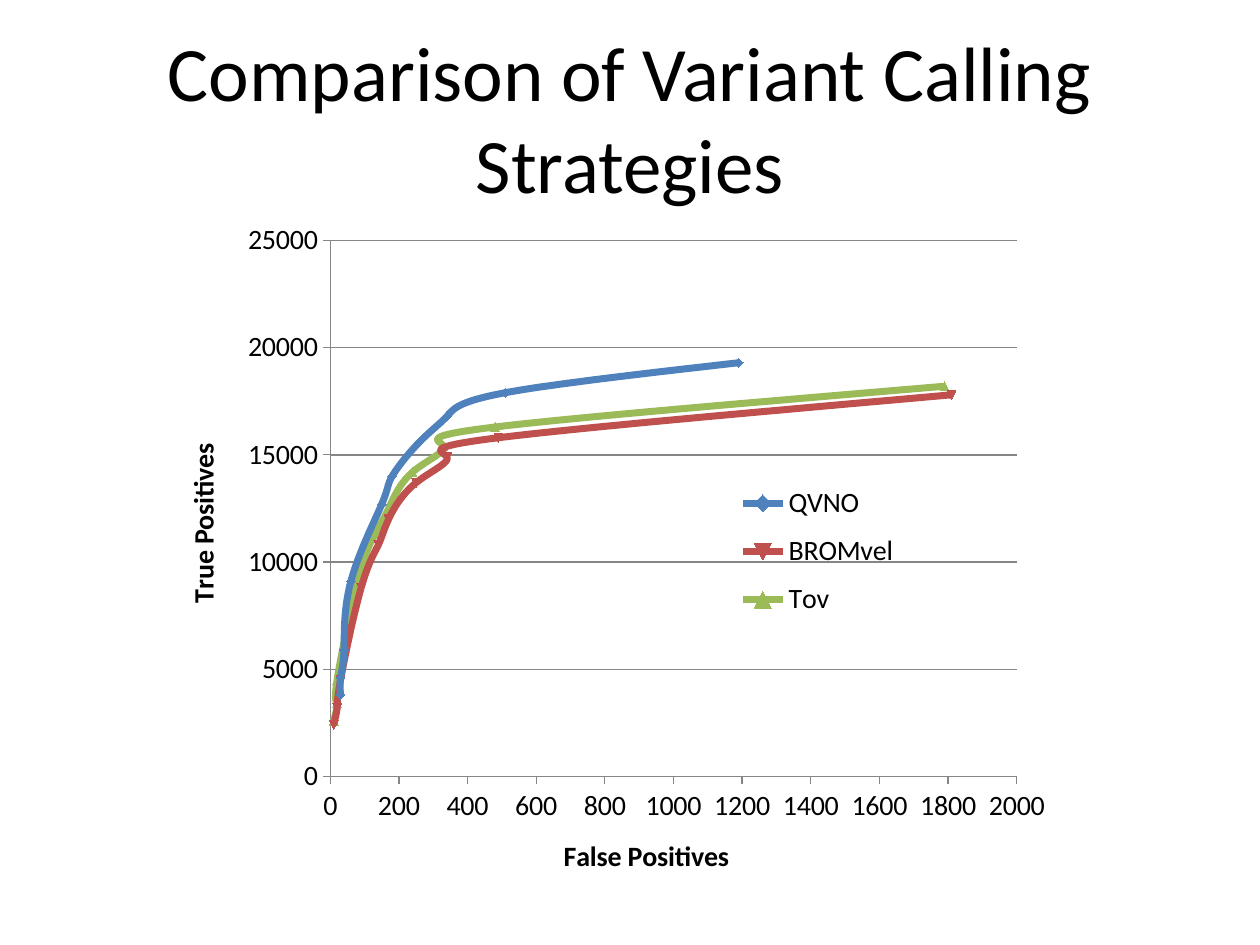
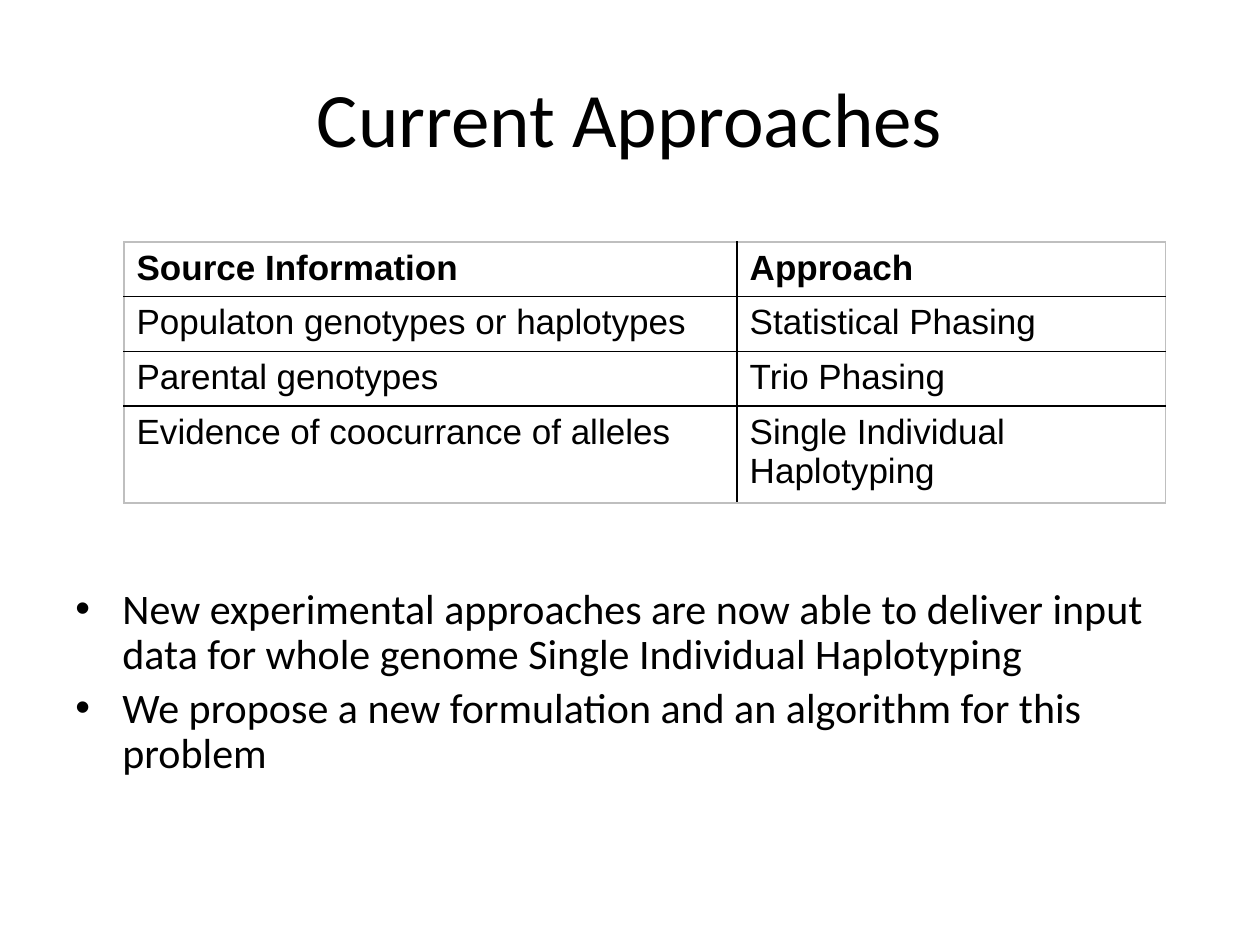
from pptx import Presentation
from pptx.chart.data import XyChartData
from pptx.dml.color import RGBColor
from pptx.enum.chart import XL_CHART_TYPE as ChartType
from pptx.enum.chart import XL_LEGEND_POSITION as LegendPosition
from pptx.enum.chart import XL_MARKER_STYLE as MarkerStyle
from pptx.enum.chart import XL_TICK_MARK as TickMark
from pptx.enum.text import MSO_ANCHOR as Anchor
from pptx.enum.text import PP_ALIGN as Align
from pptx.oxml import parse_xml
from pptx.oxml.ns import nsdecls
from pptx.util import Cm, Pt

BLACK = RGBColor(0x00, 0x00, 0x00)
AXIS_GREY = RGBColor(0x86, 0x86, 0x86)
FRAME_GREY = RGBColor(0xBF, 0xBF, 0xBF)
BLUE = RGBColor(0x4F, 0x81, 0xBD)
RED = RGBColor(0xC0, 0x50, 0x4D)
GREEN = RGBColor(0x9B, 0xBB, 0x59)
FONT = "Calibri"
TABLE_FONT = "Arial"


def style_font(font, size, name=FONT, bold=False):
    font.name = name
    font.size = Pt(size)
    font.bold = bold
    font.color.rgb = BLACK


def layout_xml(x, y, width, height, inner=False):
    """Manual chart layout, in fractions of the chart area."""
    target = '<c:layoutTarget val="inner"/>' if inner else ""
    return parse_xml(
        f'<c:layout {nsdecls("c")}><c:manualLayout>{target}'
        '<c:xMode val="edge"/><c:yMode val="edge"/>'
        f'<c:x val="{x}"/><c:y val="{y}"/><c:w val="{width}"/><c:h val="{height}"/>'
        "</c:manualLayout></c:layout>")


presentation = Presentation()
presentation.slide_width = Cm(25.4)
presentation.slide_height = Cm(19.05)

# Both slides carry the same centred title
slides = []
for title in ("Comparison of Variant Calling Strategies", "Current Approaches"):
    slide = presentation.slides.add_slide(presentation.slide_layouts[6])
    title_box = slide.shapes.add_textbox(Cm(1.27), Cm(0.76), Cm(22.86), Cm(3.18))
    text_frame = title_box.text_frame
    text_frame.word_wrap = True
    text_frame.vertical_anchor = Anchor.MIDDLE
    text_frame.text = title
    paragraph = text_frame.paragraphs[0]
    paragraph.alignment = Align.CENTER
    style_font(paragraph.runs[0].font, 44)
    slides.append(slide)
chart_slide, approaches_slide = slides

# Slide 1: true against false positives for each caller
CALLERS = [
    ("QVNO", BLUE,
     [1190, 510, 340, 260, 180, 150, 60, 40, 30, 30],
     [19300, 17900, 16800, 15600, 14000, 12700, 9100, 5900, 4600, 3800]),
    ("BROMvel", RED,
     [1810, 490, 340, 250, 170, 140, 90, 30, 20, 10],
     [17800, 15800, 14900, 13700, 12000, 10800, 8800, 4500, 3200, 2400]),
    ("Tov", GREEN,
     [1790, 480, 330, 240, 170, 130, 80, 20, 20, 10],
     [18200, 16300, 15400, 14200, 12500, 11300, 9100, 4500, 3400, 2600]),
]
chart_data = XyChartData()
for name, color, false_positives, true_positives in CALLERS:
    caller = chart_data.add_series(name)
    for point in zip(false_positives, true_positives):
        caller.add_data_point(*point)

chart = chart_slide.shapes.add_chart(
    ChartType.XY_SCATTER_SMOOTH, Cm(3.38), Cm(4.45), Cm(18.21), Cm(13.34),
    chart_data).chart
chart.has_title = False
style_font(chart.font, 16)
chart.plots[0].vary_by_categories = False

for series, (name, color, *values) in zip(chart.plots[0].series, CALLERS):
    series._element.get_or_add_smooth().val = True
    series.format.line.color.rgb = color
    series.format.line.width = Pt(4)
    series.marker.style = MarkerStyle.AUTOMATIC
    series.marker.size = 5
    series.marker.format.fill.solid()
    series.marker.format.fill.fore_color.rgb = color
    series.marker.format.line.color.rgb = color

for axis, axis_title, maximum, step in (
        (chart.category_axis, "False Positives", 2000, 200),
        (chart.value_axis, "True Positives", 25000, 5000)):
    axis.minimum_scale = 0
    axis.maximum_scale = maximum
    axis.major_unit = step
    axis.major_tick_mark = TickMark.OUTSIDE
    axis.minor_tick_mark = TickMark.NONE
    axis.format.line.color.rgb = AXIS_GREY
    axis.tick_labels.number_format = "General"
    axis.tick_labels.number_format_is_linked = False
    style_font(axis.tick_labels.font, 16)
    axis.axis_title.text_frame.text = axis_title
    style_font(axis.axis_title.text_frame.paragraphs[0].runs[0].font, 16, bold=True)
chart.category_axis.has_major_gridlines = False
chart.value_axis.has_major_gridlines = True
chart.value_axis.major_gridlines.format.line.color.rgb = AXIS_GREY

chart.has_legend = True
legend = chart.legend
legend.position = LegendPosition.RIGHT
legend.include_in_layout = False
style_font(legend.font, 16)
plot_area = chart.element.chart.plotArea
for parent, layout in (
        (plot_area, layout_xml(0.18, 0.03, 0.76, 0.81, inner=True)),
        (legend._element, layout_xml(0.62, 0.38, 0.2, 0.24))):
    for old_layout in parent.xpath("c:layout"):
        parent.remove(old_layout)
    parent.insert(0 if parent is plot_area else 1, layout)

# Slide 2: table of approaches; the last row grows with its text
APPROACHES = [
    ("Source Information", "Approach"),
    ("Populaton genotypes or haplotypes", "Statistical Phasing"),
    ("Parental genotypes", "Trio Phasing"),
    ("Evidence of coocurrance of alleles", "Single Individual Haplotyping"),
]
COLUMN_WIDTHS = [12.36, 8.64]
ROW_HEIGHT = 1.04
table = approaches_slide.shapes.add_table(
    len(APPROACHES), len(COLUMN_WIDTHS), Cm(2.5), Cm(4.88),
    Cm(sum(COLUMN_WIDTHS)), Cm(ROW_HEIGHT * len(APPROACHES))).table
table.first_row = False
table.horz_banding = False
for column, width in zip(table.columns, COLUMN_WIDTHS):
    column.width = Cm(width)
last_row, last_column = len(APPROACHES) - 1, len(COLUMN_WIDTHS) - 1
for row_index, texts in enumerate(APPROACHES):
    for column_index, text in enumerate(texts):
        cell = table.cell(row_index, column_index)
        cell.text_frame.text = text
        style_font(cell.text_frame.paragraphs[0].runs[0].font, 20, TABLE_FONT,
                   bold=row_index == 0)
        on_frame = {"L": column_index == 0, "R": column_index == last_column,
                    "T": row_index == 0, "B": row_index == last_row}
        for side, outer in on_frame.items():
            cell._tc.get_or_add_tcPr().append(parse_xml(
                f'<a:ln{side} {nsdecls("a")} w="{Pt(1)}"><a:solidFill>'
                f'<a:srgbClr val="{FRAME_GREY if outer else BLACK}"/>'
                f"</a:solidFill></a:ln{side}>"))
        cell.fill.background()

# Slide 2: bullets under the table
BULLETS = [
    "New experimental approaches are now able to deliver input data for whole "
    "genome Single Individual Haplotyping",
    "We propose a new formulation and an algorithm for this problem",
]
bullet_box = approaches_slide.shapes.add_textbox(
    Cm(1.27), Cm(11.73), Cm(22.86), Cm(4.8))
text_frame = bullet_box.text_frame
text_frame.word_wrap = True
text_frame.text = "\n".join(BULLETS)
for paragraph in text_frame.paragraphs:
    paragraph.line_spacing = 0.9
    paragraph.space_before = Pt(4.8)
    style_font(paragraph.runs[0].font, 24)
    properties = paragraph._p.get_or_add_pPr()
    properties.set("marL", str(Cm(0.95)))
    properties.set("indent", str(-Cm(0.95)))
    properties.append(parse_xml(f'<a:buFont {nsdecls("a")} typeface="Arial"/>'))
    properties.append(parse_xml(f'<a:buChar {nsdecls("a")} char="•"/>'))

presentation.save("out.pptx")
